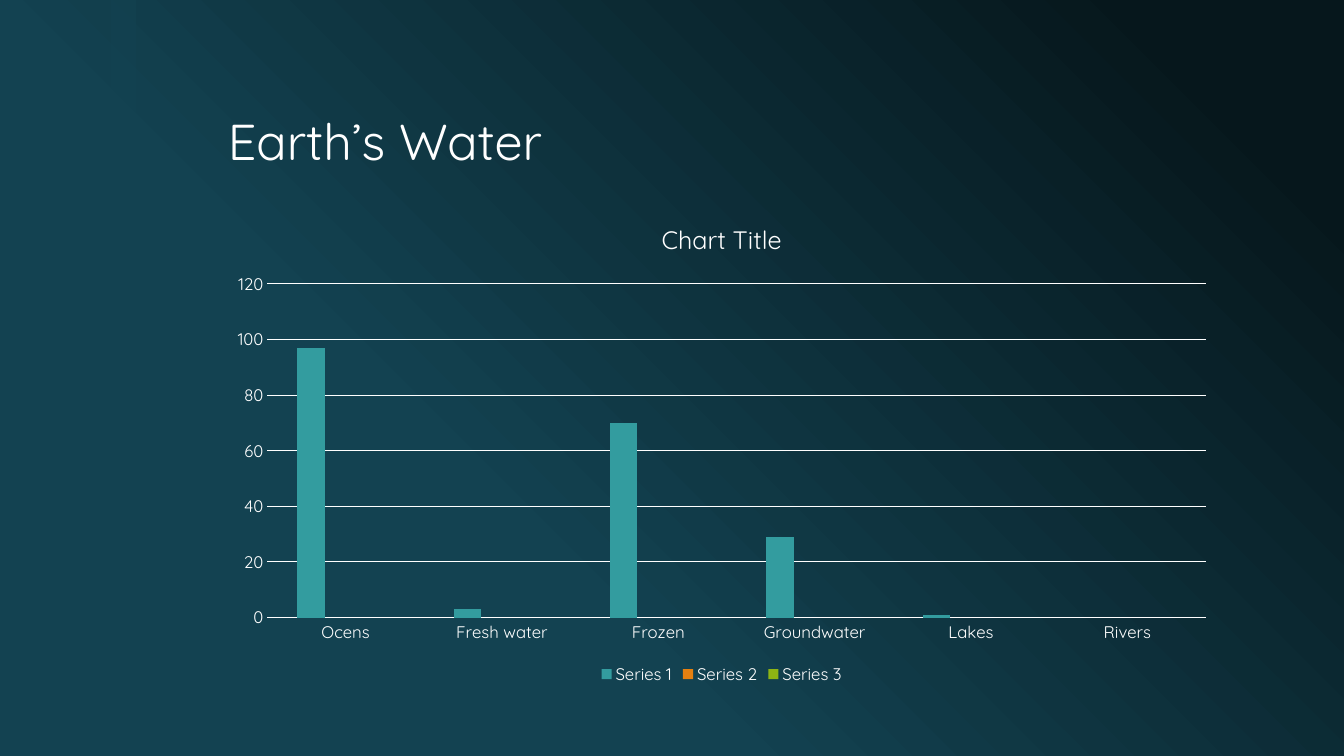
"""Build a slide with a column chart of the Earth's water."""
from lxml.etree import SubElement
from pptx import Presentation
from pptx.chart.data import CategoryChartData
from pptx.dml.color import RGBColor
from pptx.enum.chart import XL_CHART_TYPE as ChartType, XL_LEGEND_POSITION as LegendPosition
from pptx.enum.chart import XL_TICK_MARK as TickMark
from pptx.enum.shapes import MSO_SHAPE as Shape
from pptx.enum.text import MSO_ANCHOR as Anchor, MSO_AUTO_SIZE as AutoSize, PP_ALIGN as Align
from pptx.oxml.ns import qn
from pptx.util import Inches, Pt

WIDTH, HEIGHT = Inches(13.33), Inches(7.5)
FONT = "Quicksand"
WHITE, TEAL, NIGHT = "FFFFFF", "134251", "06171C"
LEFT, SPAN = 16.2, 75
CATEGORIES = ["Ocens", "Fresh water", "Frozen", "Groundwater", "Lakes", "Rivers"]
SERIES = [
    ("Series 1", [97, 3, 70, 29, 1, None], "339C9F"),
    ("Series 2", [None] * 6, "E68010"),
    ("Series 3", [None] * 6, "8EB414"),
]


def area(left, top, width, height):
    """Turn percentages of the slide's size into lengths."""
    return [int(share * side / 100) for share, side in
            zip((left, top, width, height), (WIDTH, HEIGHT) * 2)]


def paint(color_format, value):
    """Give a colour format a hex colour."""
    color_format.rgb = RGBColor.from_string(value)


def apply(target, **values):
    """Set attributes from format values."""
    for name, value in values.items():
        setattr(target, name, value)


def style_font(font, size):
    """Set the slide's white typeface at a size in points."""
    apply(font, name=FONT, size=Pt(size), bold=False)
    paint(font.color, WHITE)


def style_line(line):
    """Make a thin white line."""
    line.width = Pt(0.75)
    paint(line.color, WHITE)


def add_background(slide):
    """Fill the background with a diagonal gradient."""
    fill = slide.background.fill
    fill.gradient()
    fill.gradient_angle = 225
    for stop, position, color in zip(fill.gradient_stops, (0.1, 0.65), (NIGHT, TEAL)):
        stop.position = position
        paint(stop.color, color)


def add_band(slide):
    """Add the translucent vertical band."""
    band = slide.shapes.add_shape(Shape.RECTANGLE, *area(8.25, 0, 1.88, 100))
    band.shadow.inherit = False
    band.fill.solid()
    paint(band.fill.fore_color, TEAL)
    band.line.fill.background()
    color = band.fill._xPr.find(qn("a:solidFill"))[0]
    SubElement(color, qn("a:alpha"), val="60000")


def add_title(slide, text):
    """Place and format the slide title."""
    title = slide.shapes.title
    places = zip(("left", "top", "width", "height"), area(LEFT, 5.6, SPAN, 17.7))
    apply(title, **dict(places))
    frame = title.text_frame
    apply(frame, text=text, vertical_anchor=Anchor.BOTTOM,
          auto_size=AutoSize.NONE, word_wrap=True)
    paragraph = frame.paragraphs[0]
    apply(paragraph, alignment=Align.LEFT, line_spacing=0.9)
    style_font(paragraph.runs[0].font, 36)


def add_water_chart(slide):
    """Add the clustered columns with title, axes and legend."""
    data = CategoryChartData()
    data.categories = CATEGORIES
    for name, values, _ in SERIES:
        data.add_series(name, values)
    chart = slide.shapes.add_chart(
        ChartType.COLUMN_CLUSTERED, *area(LEFT, 26.7, SPAN, 64.4), data).chart
    style_font(chart.font, 10)

    chart.has_title = True
    chart.chart_title.text_frame.text = "Chart Title"
    style_font(chart.chart_title.text_frame.paragraphs[0].runs[0].font, 18)

    plot = chart.plots[0]
    apply(plot, gap_width=219, overlap=-27, vary_by_categories=False)
    for series, (_, _, color) in zip(plot.series, SERIES):
        series.format.fill.solid()
        paint(series.format.fill.fore_color, color)

    category_axis, value_axis = chart.category_axis, chart.value_axis
    for axis in (category_axis, value_axis):
        apply(axis, major_tick_mark=TickMark.NONE, minor_tick_mark=TickMark.NONE)
        style_font(axis.tick_labels.font, 12)
    style_line(category_axis.format.line)
    value_axis.format.line.fill.background()
    style_line(value_axis.major_gridlines.format.line)
    apply(value_axis, minimum_scale=0, maximum_scale=120, major_unit=20)

    chart.has_legend = True
    apply(chart.legend, position=LegendPosition.BOTTOM, include_in_layout=False)
    style_font(chart.legend.font, 12)


def main():
    """Build and save the presentation."""
    presentation = Presentation()
    apply(presentation, slide_width=WIDTH, slide_height=HEIGHT)
    slide = presentation.slides.add_slide(presentation.slide_layouts[5])
    add_background(slide)
    add_band(slide)
    add_title(slide, "Earth’s Water")
    add_water_chart(slide)
    presentation.save("out.pptx")


if __name__ == "__main__":
    main()
